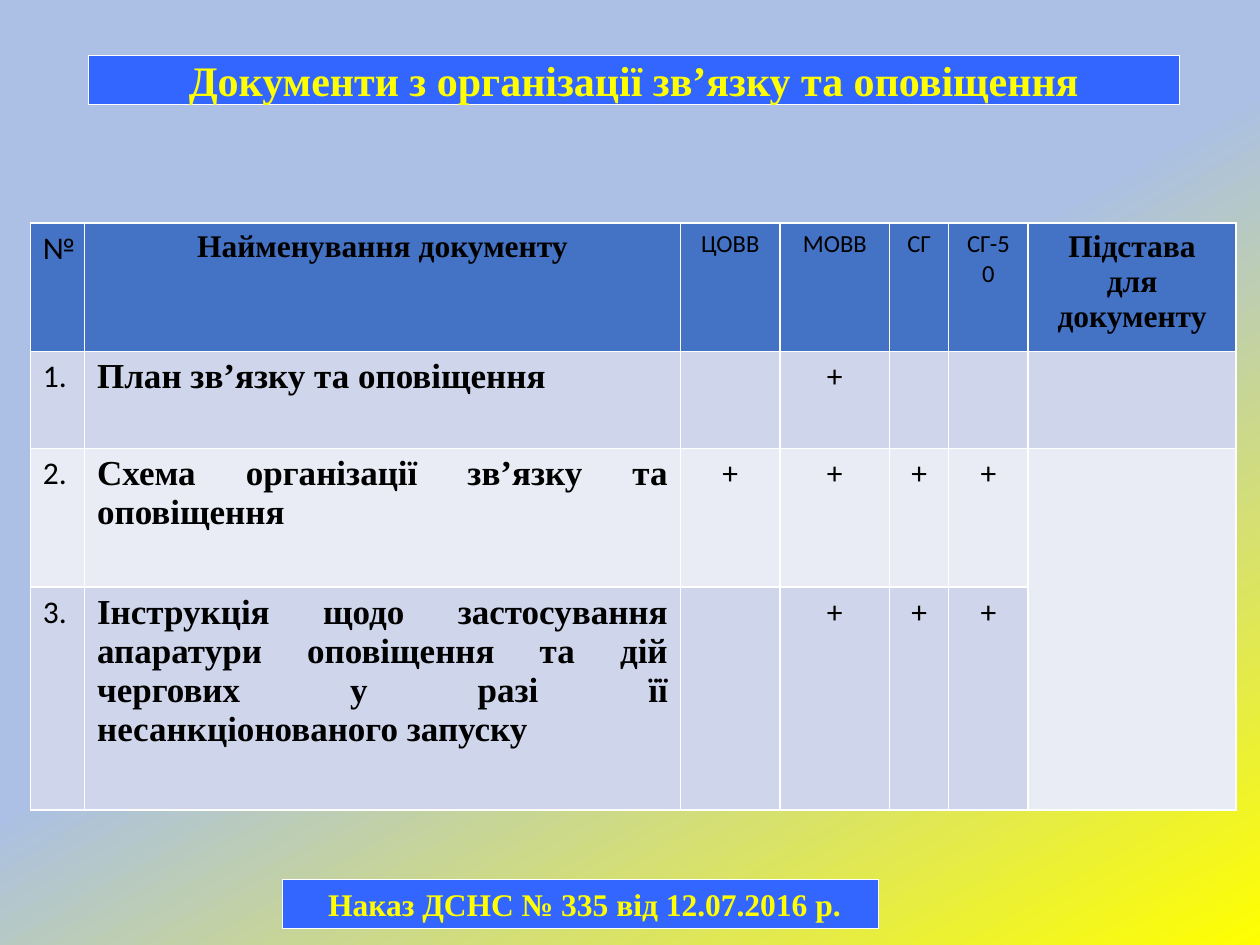
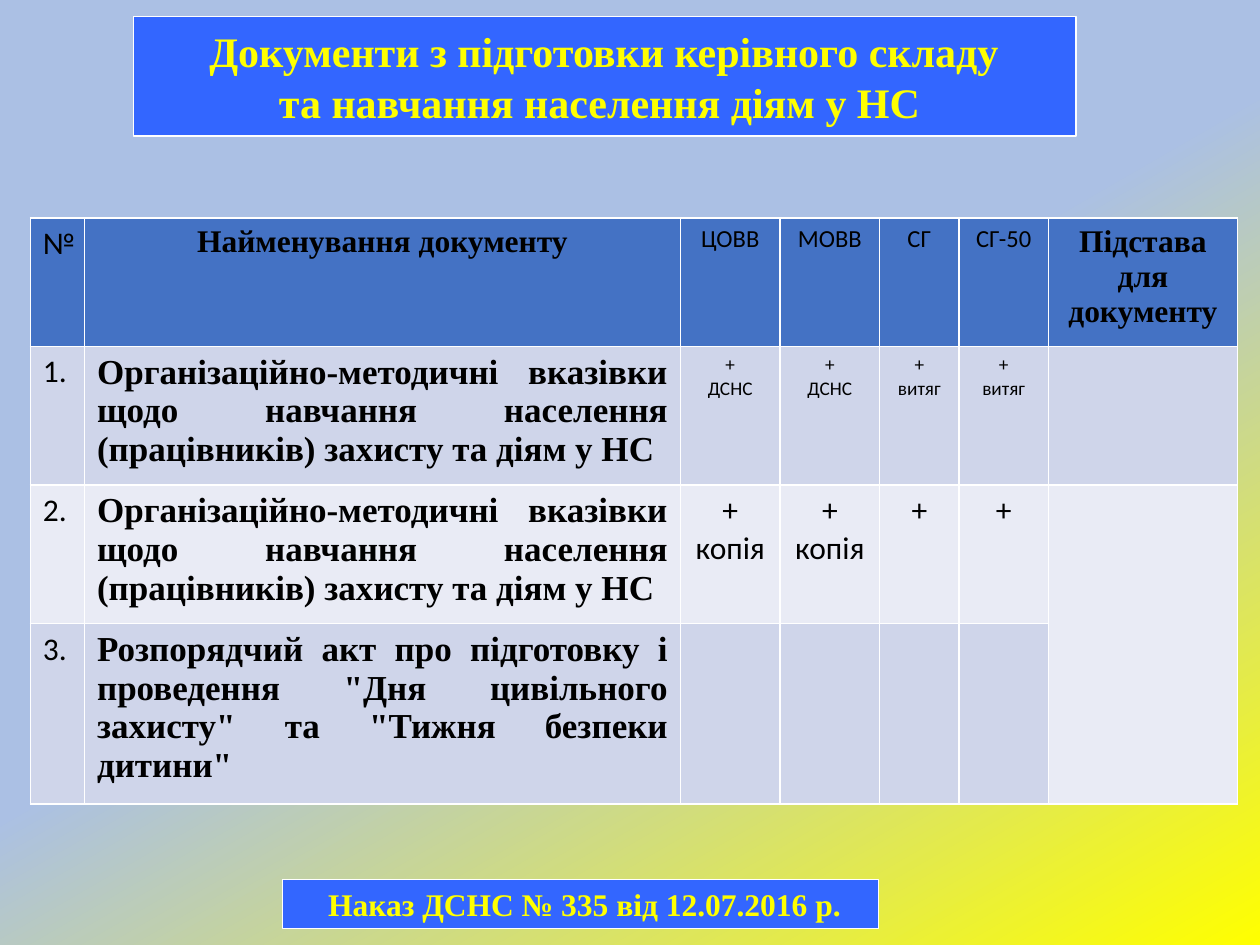
from copy import deepcopy
from dataclasses import dataclass

from lxml import etree
from pptx import Presentation
from pptx.dml.color import RGBColor
from pptx.enum.shapes import MSO_SHAPE
from pptx.enum.text import MSO_ANCHOR, MSO_AUTO_SIZE, PP_ALIGN
from pptx.oxml.ns import qn
from pptx.util import Pt

RECT = MSO_SHAPE.RECTANGLE
MIDDLE = MSO_ANCHOR.MIDDLE
NO_FIT = MSO_AUTO_SIZE.NONE
LEFT, CENTER, FULL = PP_ALIGN.LEFT, PP_ALIGN.CENTER, PP_ALIGN.JUSTIFY

COLORS = {
    "sky": "ABC0E4", "sun": "FFFF00", "band": "3366FF", "white": "FFFFFF",
    "black": "000000", "head": "4472C4", "odd": "CFD5EA", "even": "E9EBF5",
}
SERIF, SANS, PLAIN = "Times New Roman", "Calibri", "Arial"
HEADS = ["№", "Найменування документу", "ЦОВВ", "МОВВ", "СГ", "СГ-50",
         "Підстава для документу"]
ORDER = "Наказ ДСНС № 335 від 12.07.2016 р."
GUIDE = ("Організаційно-методичні вказівки щодо навчання населення "
         "(працівників) захисту та діям у НС")


@dataclass
class Box:
    left: float
    top: float
    width: float
    height: float


@dataclass
class Font:
    name: str
    size: float
    color: str = "black"
    bold: bool = False


@dataclass
class Item:
    name: str
    marks: list[str]
    height: float
    size: float = 18


@dataclass
class Page:
    title: list[list[str]]
    box: Box
    top: float
    cols: list[float]
    items: list[Item]


GAP = Font(PLAIN, 18, "white")
TITLE = Font(SERIF, 24, "sun", True)
NOTE = Font(SERIF, 18, "sun", True)
HEAD = Font(SERIF, 18, bold=True)
SMALL = Font(SANS, 14)
BODY = Font(SANS, 18)
NAME = Font(SERIF, 20, bold=True)

FOOT = Box(161.3, 502.6, 340.6, 28.1)
TABLE_LEFT, HEAD_HEIGHT = 17.3, 73.4

PAGES = [
    Page(
        [[" ", "Документи з організації зв’язку та оповіщення", " "]],
        Box(50.4, 31.7, 623.5, 28.1), 127.4,
        [31, 340.6, 56.9, 62.6, 33.8, 45.4, 118.8],
        [
            Item("План зв’язку та оповіщення", ["", "+", "", ""], 55.4),
            Item("Схема організації зв’язку та оповіщення", ["+"] * 4, 79.2),
            Item("Інструкція щодо застосування апаратури оповіщення та дій "
                 "чергових у разі її несанкціонованого запуску",
                 ["", "+", "+", "+"], 127.4),
        ],
    ),
    Page(
        [[" ", "Документи з підготовки керівного складу "],
         ["та навчання населення діям у НС "]],
        Box(76.3, 9.4, 538.6, 68.4), 124.6,
        [31, 340.6, 56.9, 56.9, 45.4, 51.1, 108],
        [
            Item(GUIDE, ["+\nДСНС"] * 2 + ["+\nвитяг"] * 2, 79.2, 11),
            Item(GUIDE, ["+\nкопія"] * 2 + ["+"] * 2, 79.2),
            Item("Розпорядчий акт про підготовку і проведення \"Дня цивільного "
                 "захисту\" та \"Тижня безпеки дитини\" ", [""] * 4, 103),
        ],
    ),
]


def rgb(key: str) -> RGBColor:
    return RGBColor.from_string(COLORS[key])


def add_run(para, text: str, font: Font) -> None:
    run = para.add_run()
    run.text = text
    run.font.name = font.name
    run.font.size = Pt(font.size)
    run.font.bold = font.bold
    run.font.color.rgb = rgb(font.color)


def paint(slide) -> None:
    """Fill the background with the slanted sky-to-sun gradient."""
    fill = slide.background.fill
    fill.gradient()
    fill.gradient_angle = 300
    first = slide.element.xpath(".//a:gs")[0]
    first.addnext(deepcopy(first))
    stops = [(0, "sky"), (0.49, "sky"), (1, "sun")]
    for stop, (place, color) in zip(fill.gradient_stops, stops):
        stop.position = place
        stop.color.rgb = rgb(color)


def band(shape, box: Box, lines: list[list[str]], font: Font) -> None:
    """Place and colour a blue band, then write its lines."""
    shape.left, shape.top = Pt(box.left), Pt(box.top)
    shape.width, shape.height = Pt(box.width), Pt(box.height)
    shape.fill.solid()
    shape.fill.fore_color.rgb = rgb("band")
    shape.line.color.rgb = rgb("white")
    shape.line.width = Pt(0.75)
    frame = shape.text_frame
    frame.auto_size = NO_FIT
    frame.word_wrap = False
    frame.vertical_anchor = MIDDLE
    for i, line in enumerate(lines):
        para = frame.add_paragraph() if i else frame.paragraphs[0]
        para.alignment = CENTER
        for text in line:
            add_run(para, text, font if text.strip() else GAP)


def edge(cell) -> None:
    """Draw thin white borders around a cell."""
    props = cell._tc.get_or_add_tcPr()
    for tag in ("a:lnL", "a:lnR", "a:lnT", "a:lnB"):
        line = etree.SubElement(props, qn(tag), w=str(Pt(1)))
        fill = etree.SubElement(line, qn("a:solidFill"))
        etree.SubElement(fill, qn("a:srgbClr"), val=COLORS["white"])


def fill_cell(cell, text: str, font: Font, align, color: str) -> None:
    edge(cell)
    cell.fill.solid()
    cell.fill.fore_color.rgb = rgb(color)
    if not text:
        return
    frame = cell.text_frame
    for i, line in enumerate(text.split("\n")):
        para = frame.add_paragraph() if i else frame.paragraphs[0]
        para.alignment = align
        add_run(para, line, font)


def add_grid(slide, page: Page) -> None:
    heights = [HEAD_HEIGHT] + [item.height for item in page.items]
    grid = slide.shapes.add_table(
        len(heights), len(page.cols), Pt(TABLE_LEFT), Pt(page.top),
        Pt(sum(page.cols)), Pt(sum(heights))).table
    for col, width in zip(grid.columns, page.cols):
        col.width = Pt(width)
    for row, height in zip(grid.rows, heights):
        row.height = Pt(height)

    # Header row
    fonts = [BODY, HEAD] + [SMALL] * 4 + [HEAD]
    for i, (text, font) in enumerate(zip(HEADS, fonts)):
        fill_cell(grid.cell(0, i), text, font, CENTER, "head")

    # Document rows
    for n, item in enumerate(page.items, 1):
        color = "odd" if n % 2 else "even"
        mark = Font(SANS, item.size)
        fill_cell(grid.cell(n, 0), f"{n}.", BODY, LEFT, color)
        fill_cell(grid.cell(n, 1), item.name, NAME, FULL, color)
        for i, text in enumerate(item.marks + [""], 2):
            fill_cell(grid.cell(n, i), text, mark, CENTER, color)
    grid.cell(2, 6).merge(grid.cell(3, 6))


def main() -> None:
    deck = Presentation()
    deck.slide_width, deck.slide_height = Pt(720), Pt(540)
    for page in PAGES:
        slide = deck.slides.add_slide(deck.slide_layouts[5])
        paint(slide)
        add_grid(slide, page)
        foot = slide.shapes.add_shape(RECT, 0, 0, 0, 0)
        foot.shadow.inherit = False
        band(foot, FOOT, [[" ", ORDER]], NOTE)
        band(slide.shapes.title, page.box, page.title, TITLE)
    deck.save("out.pptx")


if __name__ == "__main__":
    main()
